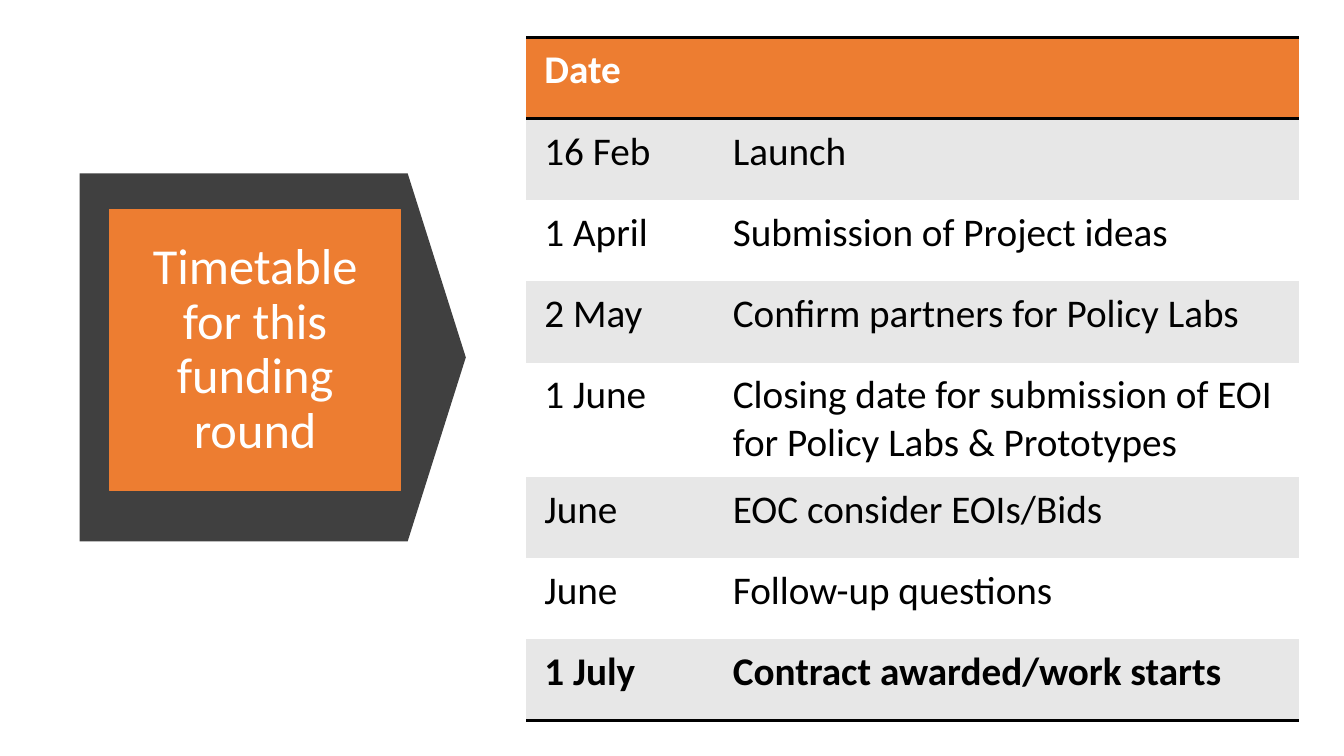
from lxml.etree import SubElement
from pptx import Presentation
from pptx.dml.color import RGBColor
from pptx.enum.shapes import MSO_SHAPE
from pptx.enum.text import MSO_ANCHOR, MSO_AUTO_SIZE, PP_ALIGN
from pptx.oxml.ns import qn
from pptx.util import Cm, Pt

TITLE = "Timetable for this funding round"
HEADER = ("Date", "")
STEPS = [
    ("16 Feb", "Launch"),
    ("1 April", "Submission of Project ideas"),
    ("2 May", "Confirm partners for Policy Labs"),
    ("1 June", "Closing date for submission of EOI for Policy Labs & Prototypes"),
    ("June", "EOC consider EOIs/Bids"),
    ("June", "Follow-up questions"),
    ("1 July", "Contract awarded/work starts"),
]

ORANGE = RGBColor(0xED, 0x7D, 0x31)
CHARCOAL = RGBColor(0x40, 0x40, 0x40)
GREY = RGBColor(0xE7, 0xE7, 0xE7)
WHITE = RGBColor(0xFF, 0xFF, 0xFF)
BLACK = RGBColor(0, 0, 0)

FONT = "Calibri"
COLUMN_WIDTHS = (Cm(4.75), Cm(14.73))
ROW_HEIGHT = Cm(2.05)
PLAIN_TABLE_STYLE = "{2D5ABB26-0587-4C30-8999-92F81FD0307C}"


def apply(target, **values):
    for name, value in values.items():
        setattr(target, name, value)


def write(frame, text, size, color, bold=False):
    para = frame.paragraphs[0]
    span = para.add_run()
    span.text = text
    apply(span.font, name=FONT, size=Pt(size), bold=bold)
    span.font.color.rgb = color
    return para


def fill(target, color):
    target.fill.solid()
    target.fill.fore_color.rgb = color


def add_borders(cell, sides):
    """Draw black rules on the given sides; call before filling the cell."""
    properties = cell._tc.get_or_add_tcPr()
    for side in sides:
        line = SubElement(properties, qn(f"a:ln{side}"), w=str(Pt(2)))
        solid = SubElement(line, qn("a:solidFill"))
        SubElement(solid, qn("a:srgbClr"), val=str(BLACK))


def add_arrow(page):
    arrow = page.shapes.add_shape(
        MSO_SHAPE.DOWN_ARROW, Cm(2.24), Cm(4.14), Cm(9.27), Cm(9.73))
    arrow.rotation = 270
    arrow.adjustments[0] = 1
    arrow.adjustments[1] = 0.158
    arrow.shadow.inherit = False
    fill(arrow, CHARCOAL)
    arrow.line.fill.background()
    page.shapes._spTree.insert(2, arrow._element)  # behind the title


def format_title(title):
    apply(title, left=Cm(2.77), top=Cm(5.28), width=Cm(7.32), height=Cm(7.09))
    fill(title, ORANGE)
    title.line.color.rgb = ORANGE
    title.line.width = Pt(0.75)
    frame = title.text_frame
    apply(frame, word_wrap=True, auto_size=MSO_AUTO_SIZE.NONE,
          vertical_anchor=MSO_ANCHOR.MIDDLE,
          margin_left=Cm(0.5), margin_right=Cm(0.5))
    para = write(frame, TITLE, 36, WHITE)
    apply(para, alignment=PP_ALIGN.CENTER, line_spacing=0.9)


def add_timetable(page):
    rows = [HEADER, *STEPS]
    last = len(rows) - 1
    table = page.shapes.add_table(
        len(rows), len(HEADER), Cm(13.26), Cm(0.94),
        sum(COLUMN_WIDTHS), ROW_HEIGHT * len(rows)).table
    apply(table, first_row=False, horz_banding=False)
    table._tbl.tblPr.find(qn("a:tableStyleId")).text = PLAIN_TABLE_STYLE
    for column, width in zip(table.columns, COLUMN_WIDTHS):
        column.width = width
    for r, texts in enumerate(rows):
        table.rows[r].height = ROW_HEIGHT
        sides = {0: "TB", last: "B"}.get(r, "")
        background = ORANGE if r == 0 else GREY if r % 2 else WHITE
        for c, text in enumerate(texts):
            cell = table.cell(r, c)
            apply(cell, margin_left=Cm(0.46), margin_right=Cm(0.46),
                  margin_top=Cm(0.23), margin_bottom=Cm(0.23))
            add_borders(cell, sides)
            fill(cell, background)
            if text:
                write(cell.text_frame, text, 28, BLACK if r else WHITE,
                      bold=r in (0, last))


def main():
    deck = Presentation()
    apply(deck, slide_width=Cm(33.87), slide_height=Cm(19.05))
    page = deck.slides.add_slide(deck.slide_layouts[5])
    add_arrow(page)
    format_title(page.shapes.title)
    add_timetable(page)
    deck.save("out.pptx")


if __name__ == "__main__":
    main()
